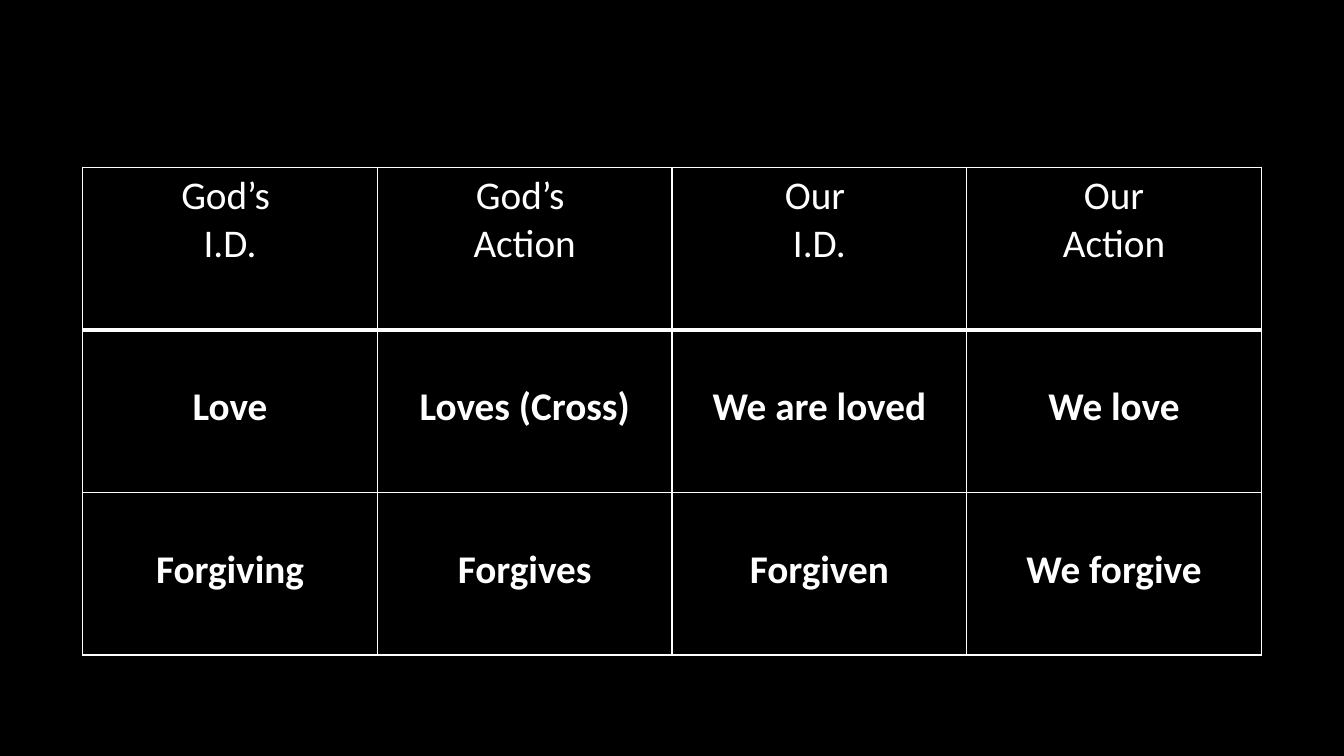
from lxml import etree
from pptx import Presentation
from pptx.dml.color import RGBColor
from pptx.enum.text import PP_ALIGN
from pptx.oxml.ns import qn
from pptx.util import Inches, Pt

BLACK = RGBColor(0, 0, 0)
WHITE = RGBColor(255, 255, 255)
CENTER = PP_ALIGN.CENTER

ROWS = [
    ["God’s \nI.D.", "God’s \nAction", "Our \nI.D.", "Our\nAction"],
    ["Love", "Loves (Cross)", "We are loved", "We love"],
    ["Forgiving", "Forgives", "Forgiven", "We forgive"],
]


def add_border(cell, side, width):
    line = etree.SubElement(cell._tc.get_or_add_tcPr(), qn(f"a:ln{side}"), w=str(Pt(width)))
    fill = etree.SubElement(line, qn("a:solidFill"))
    etree.SubElement(fill, qn("a:srgbClr"), val=str(WHITE))


prs = Presentation()
prs.slide_width = Inches(13.33)
prs.slide_height = Inches(7.5)
slide = prs.slides.add_slide(prs.slide_layouts[6])
slide.background.fill.solid()
slide.background.fill.fore_color.rgb = BLACK

frame = slide.shapes.add_table(
    len(ROWS), len(ROWS[0]), Inches(0.82), Inches(1.66), Inches(11.69), Inches(4.84)
)
table = frame.table
table.horz_banding = False

for r, row in enumerate(ROWS):
    head = r == 0
    for c, text in enumerate(row):
        cell = table.cell(r, c)
        for side in "LRTB":
            add_border(cell, side, 3 if head and side == "B" else 1)
        cell.fill.background()
        # Body words sit one line lower than the headings
        cell.margin_top = Inches(0.05 if head else 0.53)
        cell.text_frame.text = text
        for para in cell.text_frame.paragraphs:
            para.alignment = CENTER
            for run in para.runs:
                run.font.name = "Calibri"
                run.font.size = Pt(28)
                run.font.bold = not head
                run.font.color.rgb = WHITE

prs.save("out.pptx")
